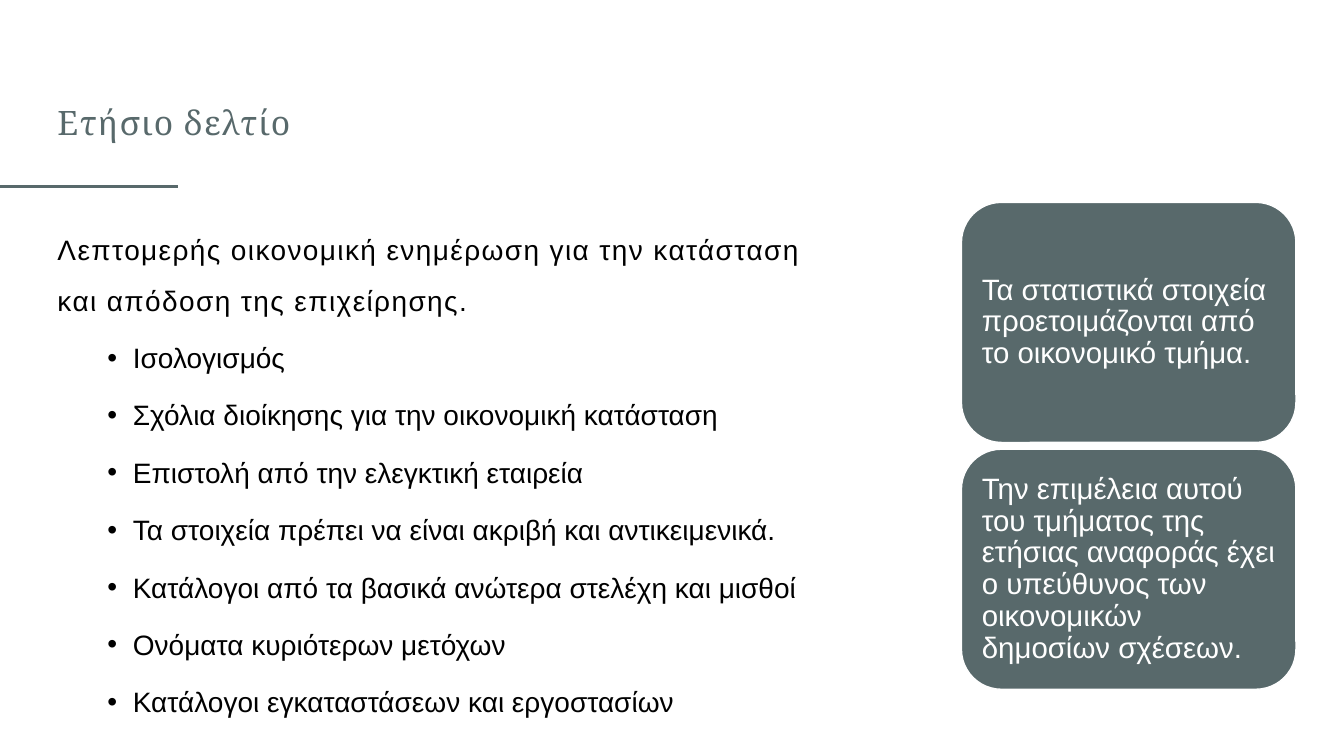
"""Build the annual report slide with its contents list and two notes."""
from lxml import etree
from pptx import Presentation
from pptx import util as u
from pptx.dml.color import RGBColor
from pptx.enum import shapes, text
from pptx.oxml.ns import qn

SLATE = RGBColor(0x58, 0x69, 0x6B)
BLACK = RGBColor(0x00, 0x00, 0x00)
WHITE = RGBColor(0xFF, 0xFF, 0xFF)

INTRO = "Λεπτομερής οικονομική ενημέρωση για την κατάσταση και απόδοση της επιχείρησης."
CONTENTS = [
    "Ισολογισμός",
    "Σχόλια διοίκησης για την οικονομική κατάσταση",
    "Επιστολή από την ελεγκτική εταιρεία",
    "Τα στοιχεία πρέπει να είναι ακριβή και αντικειμενικά.",
    "Κατάλογοι από τα βασικά ανώτερα στελέχη και μισθοί",
    "Ονόματα κυριότερων μετόχων",
    "Κατάλογοι εγκαταστάσεων και εργοστασίων",
]
NOTES = [
    "Τα στατιστικά στοιχεία προετοιμάζονται από το οικονομικό τμήμα.",
    "Την επιμέλεια αυτού του τμήματος της ετήσιας αναφοράς έχει ο υπεύθυνος "
    "των οικονομικών δημοσίων σχέσεων.",
]


def write(paragraph, words, size=20, color=BLACK, font="Arial", tracking=0,
          line_spacing=1.0, space_before=0, bullet=False):
    paragraph.alignment = text.PP_ALIGN.LEFT
    paragraph.line_spacing = line_spacing
    paragraph.space_before = u.Pt(space_before)
    run = paragraph.add_run()
    run.text = words
    run.font.size = u.Pt(size)
    run.font.name = font
    run.font.color.rgb = color
    if tracking:
        run.font._element.set("spc", str(tracking * 100))
    if bullet:
        properties = paragraph._p.get_or_add_pPr()
        properties.set("lvl", "1")
        properties.set("marL", str(u.Cm(1.9)))
        properties.set("indent", str(u.Cm(-0.64)))
        etree.SubElement(properties, qn("a:buFont"), typeface="Arial")
        etree.SubElement(properties, qn("a:buChar"), char="•")


presentation = Presentation()
presentation.slide_width = u.Cm(33.87)
presentation.slide_height = u.Cm(19.05)
slide = presentation.slides.add_slide(presentation.slide_layouts[6])

rule = slide.shapes.add_connector(
    shapes.MSO_CONNECTOR.STRAIGHT, u.Cm(0), u.Cm(4.7), u.Cm(4.48), u.Cm(4.7))
rule.line.color.rgb = SLATE
rule.line.width = u.Pt(1.5)
etree.SubElement(rule._element.spPr, qn("a:effectLst"))

body = slide.shapes.add_textbox(u.Cm(1.2), u.Cm(5.59), u.Cm(19.4), u.Cm(13.23))
body_frame = body.text_frame
body_frame.word_wrap = True
body_frame.vertical_anchor = text.MSO_ANCHOR.MIDDLE
body_frame.margin_top = u.Cm(0)
body_frame.margin_bottom = u.Cm(0.86)
write(body_frame.paragraphs[0], INTRO, tracking=1, line_spacing=1.5)
for entry in CONTENTS:
    write(body_frame.add_paragraph(), entry, line_spacing=1.5, space_before=5, bullet=True)

title = slide.shapes.add_textbox(u.Cm(1.2), u.Cm(2.16), u.Cm(8.43), u.Cm(1.83))
title.text_frame.word_wrap = True
title.text_frame.vertical_anchor = text.MSO_ANCHOR.MIDDLE
write(title.text_frame.paragraphs[0], "Ετήσιο δελτίο", size=24, color=SLATE,
      font="Cambria", tracking=1)

for index, note in enumerate(NOTES):
    card = slide.shapes.add_shape(
        shapes.MSO_SHAPE.ROUNDED_RECTANGLE,
        u.Cm(24.23), u.Cm(5.1 + 6.22 * index), u.Cm(8.43), u.Cm(6.05))
    card.shadow.inherit = False
    card.fill.solid()
    card.fill.fore_color.rgb = SLATE
    card.line.color.rgb = WHITE
    card.line.width = u.Pt(1)
    card_frame = card.text_frame
    card_frame.word_wrap = True
    card_frame.vertical_anchor = text.MSO_ANCHOR.MIDDLE
    card_frame.margin_left = card_frame.margin_top = card_frame.margin_bottom = u.Cm(0.22)
    card_frame.margin_right = u.Cm(0.18)
    write(card_frame.paragraphs[0], note, size=21, color=WHITE, line_spacing=0.9)

presentation.save("out.pptx")
